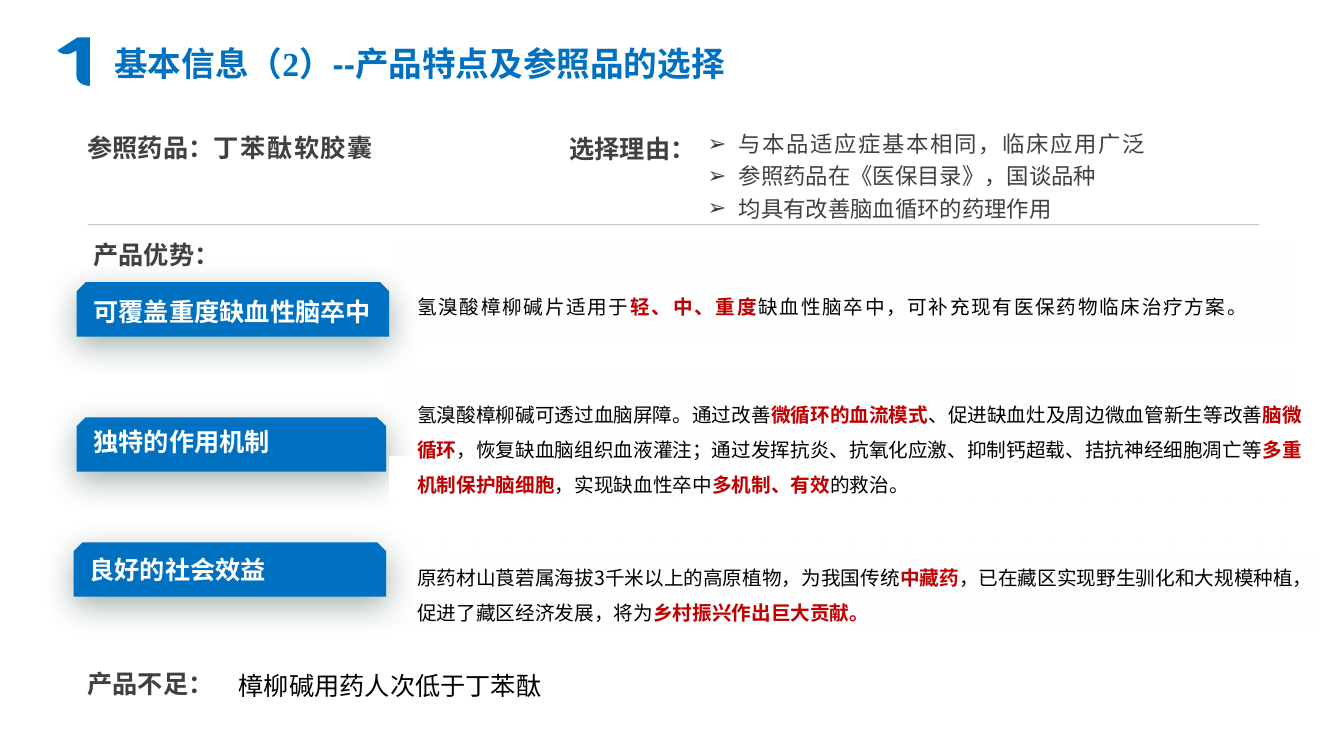
from dataclasses import dataclass
from lxml.etree import SubElement as Sub
from pptx import Presentation as Deck
from pptx.dml.color import RGBColor as RGB
from pptx.enum.shapes import MSO_CONNECTOR as Conn, MSO_SHAPE as Kind
from pptx.enum.text import MSO_ANCHOR as Anchor, MSO_AUTO_SIZE as Fit, PP_ALIGN as Align
from pptx.oxml.ns import qn
from pptx.util import Inches, Pt


@dataclass(frozen=True)
class Theme:
    blue: str = "0070C0"
    red: str = "C00000"
    gray: str = "404040"
    rule: str = "808080"
    shade: str = "1A4530"
    black: str = "000000"
    white: str = "FFFFFF"
    font: str = "Noto Sans CJK SC"
    latin: str = "Arial"
    serif: str = "Times New Roman"
    title: int = 24
    gap: int = 20
    head: int = 18
    list: int = 16
    body: int = 14
    wide: float = 1.2


class Page:
    """Draws styled elements on one slide."""

    def __init__(self, deck, theme):
        self.look = theme
        self.slide = deck.slides.add_slide(deck.slide_layouts[5])
        self.shapes = self.slide.shapes

    def place(self, shape, box):
        shape.left, shape.top, shape.width, shape.height = map(Inches, box)

    def run(self, para, text, size, color, bold=False, space=0, font=None):
        run = para.add_run()
        run.text = text
        run.font.size = Pt(size)
        run.font.bold = bold
        run.font.name = font or self.look.font
        run.font.color.rgb = RGB.from_string(color)
        props = run.font._element
        Sub(props, qn("a:ea")).set("typeface", self.look.font)
        if space:
            props.set("spc", str(round(space * 100)))

    def title(self, box, parts):
        shape = self.shapes.title
        self.place(shape, box)
        frame = shape.text_frame
        frame.auto_size = Fit.NONE
        frame.word_wrap = True
        frame.vertical_anchor = Anchor.TOP
        para = frame.paragraphs[0]
        para.alignment = Align.LEFT
        para.line_spacing = 0.9
        for text, size, font in parts:
            self.run(para, text, size, self.look.blue, True, font=font)

    def frame(self, box):
        frame = self.shapes.add_textbox(*map(Inches, box)).text_frame
        frame.word_wrap = True
        frame.auto_size = Fit.SHAPE_TO_FIT_TEXT
        return frame

    def para(self, frame, lead=1.0, first=True):
        para = frame.paragraphs[0] if first else frame.add_paragraph()
        para.line_spacing = lead
        para._p.get_or_add_pPr().set("hangingPunct", "1")
        return para

    def label(self, box, text, color=None, bold=True, lead=1.0, tail=""):
        para = self.para(self.frame(box), lead)
        color = color or self.look.gray
        self.run(para, text, self.look.head, color, bold)
        if tail:
            self.run(para, tail, self.look.head, color, bold, self.look.wide)

    def list(self, box, items):
        frame = self.frame(box)
        for i, (text, space) in enumerate(items):
            para = self.para(frame, 1.2, i == 0)
            props = para._p.get_or_add_pPr()
            props.set("marL", str(Inches(0.31)))
            props.set("indent", str(Inches(-0.31)))
            Sub(props, qn("a:buFont")).set("typeface", self.look.latin)
            Sub(props, qn("a:buChar")).set("char", "➢")
            self.run(para, text, self.look.list, self.look.gray, space=space)

    def body(self, box, parts, lead, space):
        para = self.para(self.frame(box), lead)
        for i, text in enumerate(parts):
            key = i % 2 == 1
            color = self.look.red if key else self.look.black
            self.run(para, text, self.look.body, color, key, space)

    def panel(self, box):
        shape = self.shapes.add_shape(Kind.SNIP_1_RECTANGLE, *map(Inches, box))
        shape.adjustments[0] = 0
        shape.rotation = 180
        shape.shadow.inherit = False
        shape.line.fill.background()
        shape.fill.gradient()
        shape.fill.gradient_angle = 180
        for stop, pos in zip(shape.fill.gradient_stops, (0.4, 1)):
            stop.position = pos
            stop.color.rgb = RGB.from_string(self.look.white)
        last = list(shape._element.spPr.iter(qn("a:srgbClr")))[-1]
        Sub(last, qn("a:alpha")).set("val", "0")

    def tag(self, box):
        shape = self.shapes.add_shape(Kind.SNIP_2_SAME_RECTANGLE, *map(Inches, box))
        shape.fill.solid()
        shape.fill.fore_color.rgb = RGB.from_string(self.look.blue)
        shape.line.fill.background()
        shape.shadow.inherit = False
        glow = Sub(shape._element.spPr.find(qn("a:effectLst")), qn("a:outerShdw"))
        for name, val in (("blurRad", Pt(23)), ("dist", Pt(7)), ("dir", 5400000),
                          ("algn", "t"), ("rotWithShape", 0)):
            glow.set(name, str(val))
        color = Sub(glow, qn("a:srgbClr"))
        color.set("val", self.look.shade)
        Sub(color, qn("a:alpha")).set("val", "40000")

    def rule(self, left, right, top):
        line = self.shapes.add_connector(Conn.STRAIGHT, *map(Inches, (left, top, right, top)))
        line.line.width = Pt(1)
        line.line.color.rgb = RGB.from_string(self.look.rule)
        props = line._element.spPr
        Sub(next(props.iter(qn("a:srgbClr"))), qn("a:alpha")).set("val", "40000")
        Sub(props, qn("a:effectLst"))

    def digit(self, paths):
        group = self.shapes.add_group_shape()
        for path in paths:
            dots = [path[0]]
            for step in path[1:]:
                dots += curve(dots[-1], *step) if len(step) == 3 else [step]
            dots = [(Inches(x), Inches(y)) for x, y in dots]
            pen = group.shapes.build_freeform(*dots[0])
            shape = pen.add_line_segments(dots[1:], close=True).convert_to_shape()
            shape.fill.solid()
            shape.fill.fore_color.rgb = RGB.from_string(self.look.blue)
            shape.line.fill.background()
            shape.shadow.inherit = False


def curve(a, b, c, d, count=8):
    dots = []
    for i in range(1, count + 1):
        t = i / count
        u = 1 - t
        dots.append(tuple(u**3 * p + 3 * u * u * t * q + 3 * u * t * t * r + t**3 * s
                          for p, q, r, s in zip(a, b, c, d)))
    return dots


def main():
    deck = Deck()
    deck.slide_width, deck.slide_height = Inches(13.33), Inches(7.5)
    look = Theme()
    page = Page(deck, look)
    page.title((0.97, 0.42, 12.78, 0.65), [
        (" ", look.gap, look.latin), ("基本信息（", look.title, look.latin),
        ("2", look.title, look.serif), ("）--产品特点及参照品的选择", look.title, look.latin)])
    page.label((0.77, 1.26, 4.08, 0.4), "参照药品：", tail="丁苯酞软胶囊")
    page.label((5.55, 1.21, 1.27, 0.43), "选择理由：", lead=1.2)
    page.list((6.92, 1.19, 4.61, 1.07), [
        ("与本品适应症基本相同，临床应用广泛", look.wide),
        ("参照药品在《医保目录》，国谈品种", 0), ("均具有改善脑血循环的药理作用", 0)])

    rows = [
        ([(3.86, 2.35, 9.01, 1.07)], (0.76, 2.8, 3.1, 0.54),
         (0.83, 2.89, 3.04, 0.4), "可覆盖重度缺血性脑卒中"),
        ([(3.86, 3.68, 9.01, 0.88)], (0.76, 4.14, 3.07, 0.54),
         (0.83, 4.18, 3.04, 0.4), "独特的作用机制"),
        ([(3.86, 4.53, 9.19, 1.29), (3.86, 5.47, 9.19, 0.8)], (0.73, 5.38, 3.1, 0.54),
         (0.79, 5.45, 3.04, 0.4), "良好的社会效益")]
    for panels, tag, box, text in rows:
        for panel in panels:
            page.panel(panel)
        page.tag(tag)
        page.label(box, text, look.white)
    page.label((0.83, 2.33, 1.33, 0.4), "产品优势：")
    page.rule(0.87, 12.49, 2.23)

    page.body((4.04, 2.85, 8.63, 0.36), [
        "氢溴酸樟柳碱片适用于", "轻、中、重度",
        "缺血性脑卒中，可补充现有医保药物临床治疗方案。"], 1.1, look.wide)
    page.body((4.04, 3.83, 9.01, 1.16), [
        "氢溴酸樟柳碱可透过血脑屏障。通过改善", "微循环的血流模式",
        "、促进缺血灶及周边微血管新生等改善", "脑微循环",
        "，恢复缺血脑组织血液灌注；通过发挥抗炎、抗氧化应激、抑制钙超载、拮抗神经细胞凋亡等",
        "多重机制保护脑细胞", "，实现缺血性卒中", "多机制、有效", "的救治。"], 1.5, 0)
    page.body((4.04, 5.45, 9.05, 0.81), [
        "原药材山莨菪属海拔3千米以上的高原植物，为我国传统", "中藏药",
        "，已在藏区实现野生驯化和大规模种植，促进了藏区经济发展，将为",
        "乡村振兴作出巨大贡献。"], 1.5, 0)
    page.label((0.77, 6.58, 1.68, 0.4), "产品不足：")
    page.label((2.27, 6.6, 6.67, 0.4), "樟柳碱用药人次低于丁苯酞", look.black, False)
    page.digit([
        [(0.76, 0.5), (0.72, 0.52), ((0.67, 0.55), (0.6, 0.54), (0.57, 0.5)),
         (0.77, 0.37), (0.89, 0.37), (0.89, 0.85),
         ((0.82, 0.85), (0.76, 0.81), (0.76, 0.75))],
        [(0.76, 0.75), ((0.76, 0.81), (0.82, 0.85), (0.89, 0.85)), (0.89, 0.55),
         ((0.89, 0.5), (0.81, 0.47), (0.76, 0.5))]])
    deck.save("out.pptx")


if __name__ == "__main__":
    main()
